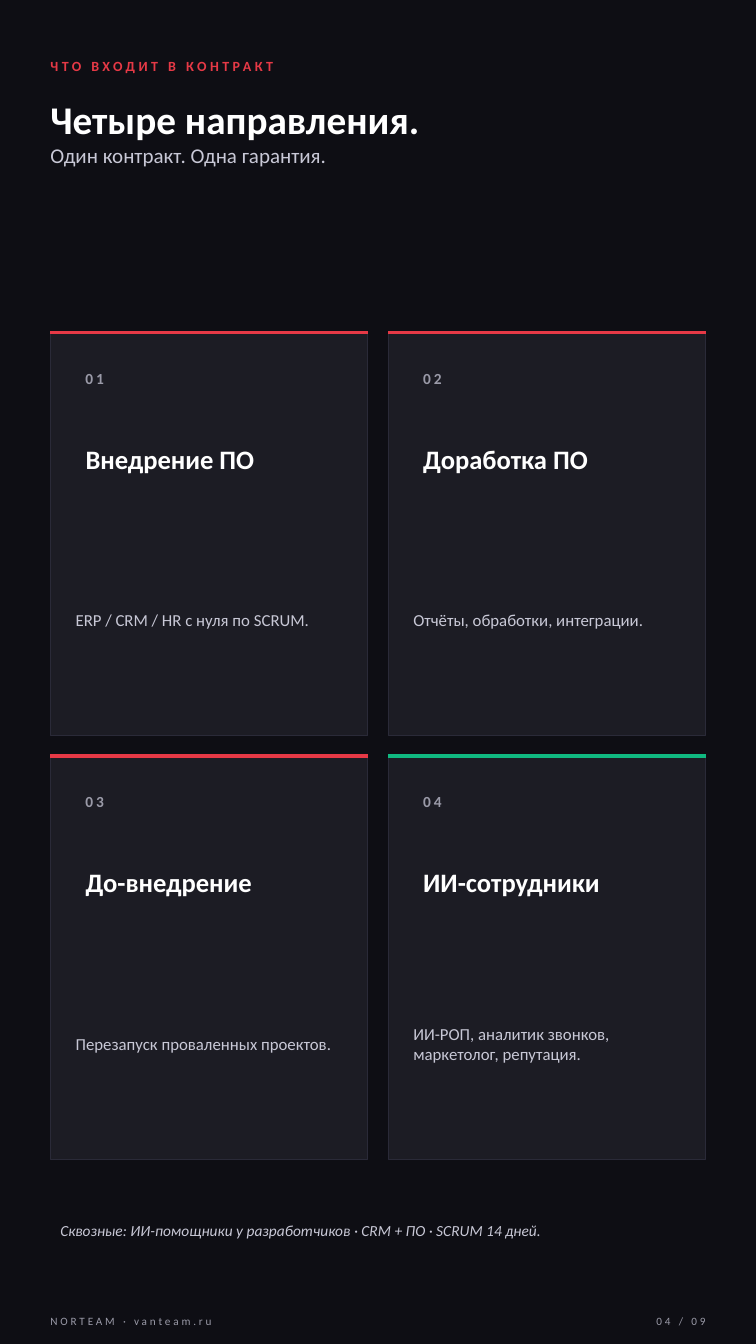
import pptx
import pptx.dml.color
import pptx.enum.shapes
import pptx.enum.text
import pptx.oxml.ns
import pptx.util

PX = 9144
FONT = "Calibri"
BACK, PANEL, EDGE = "0E0E14", "1C1C24", "2A2A38"
RED, GREEN = "E63946", "10B981"
WHITE, SOFT, MUTED = "FFFFFF", "C8C8D6", "9A9AA8"
CARD_W, CARD_H = 315, 400
LEFT, TOP, GAP = 50, 330, 20
CARDS = [
    ("Внедрение ПО", "ERP / CRM / HR с нуля по SCRUM.", RED),
    ("Доработка ПО", "Отчёты, обработки, интеграции.", RED),
    ("До-внедрение", "Перезапуск проваленных проектов.", RED),
    ("ИИ-сотрудники", "ИИ-РОП, аналитик звонков, маркетолог, репутация.", GREEN),
]


def px(*values):
    """Turn whole px into EMU lengths."""
    return [pptx.util.Emu(v * PX) for v in values]


def rgb(value):
    """Turn a hex string into a colour."""
    return pptx.dml.color.RGBColor.from_string(value)


def style_run(r, size, color, bold=False, italic=False, spacing=0):
    """Format one run; spacing is in points."""
    r.font.name = FONT
    r.font.size = pptx.util.Pt(size)
    r.font.color.rgb = rgb(color)
    r.font.bold = bold
    r.font.italic = italic
    if spacing:
        r.font._element.set("spc", str(int(spacing * 100)))


def add_text(slide, box, text, *styles, inset=False, top=False, right=False):
    """Add a one-paragraph text box with one style for each line."""
    tf = slide.shapes.add_textbox(*px(*box)).text_frame
    tf.word_wrap = True
    anchor = pptx.enum.text.MSO_ANCHOR
    tf.vertical_anchor = anchor.TOP if top else anchor.MIDDLE
    if not inset:
        tf.margin_left = tf.margin_top = tf.margin_right = tf.margin_bottom = 0
    p = tf.paragraphs[0]
    p.text = text
    if right:
        p.alignment = pptx.enum.text.PP_ALIGN.RIGHT
    for r, style in zip(p.runs, styles):
        style_run(r, **style)
    return p


def add_panel(slide, x, y, accent):
    """Add a card background with an accent line along its top."""
    sp = slide.shapes.add_shape(
        pptx.enum.shapes.MSO_SHAPE.RECTANGLE, *px(x, y, CARD_W, CARD_H))
    sp.shadow.inherit = False
    sp.fill.solid()
    sp.fill.fore_color.rgb = rgb(PANEL)
    sp.line.color.rgb = rgb(EDGE)
    sp.line.width = pptx.util.Pt(0.75)
    line = slide.shapes.add_connector(
        pptx.enum.shapes.MSO_CONNECTOR.STRAIGHT, *px(x, y, x + CARD_W, y))
    line.line.color.rgb = rgb(accent)
    line.line.width = pptx.util.Pt(2.5)
    effects = pptx.oxml.parse_xml(
        f'<a:effectLst {pptx.oxml.ns.nsdecls("a")}/>')
    line._element.spPr.append(effects)


def add_card(slide, index, title, detail, accent):
    """Add a numbered card at its place in the two-column grid."""
    row, col = divmod(index, 2)
    x, y = LEFT + col * (CARD_W + GAP), TOP + row * (CARD_H + GAP)
    add_panel(slide, x, y, accent)
    add_text(slide, (x + 25, y + 30, 150, 30), f"{index + 1:02}",
             dict(size=11, color=MUTED, bold=True, spacing=2), inset=True)
    add_text(slide, (x + 25, y + 70, 265, 110), title,
             dict(size=19, color=WHITE, bold=True), inset=True)
    add_text(slide, (x + 25, y + 190, 265, 190), detail,
             dict(size=12, color=SOFT))


def add_header(slide):
    """Add the eyebrow, the title and the subtitle."""
    add_text(slide, (LEFT, 50, 630, 30), "ЧТО ВХОДИТ В КОНТРАКТ",
             dict(size=10, color=RED, bold=True, spacing=2.5))
    p = add_text(slide, (LEFT, 95, 650, 160),
                 "Четыре направления.\vОдин контракт. Одна гарантия.",
                 dict(size=28, color=WHITE, bold=True),
                 dict(size=15, color=SOFT), top=True)
    p.space_after = pptx.util.Pt(4)


def add_footer(slide):
    """Add the closing note, the sender and the page number."""
    add_text(slide, (LEFT, 1200, 650, 40),
             "Сквозные: ИИ-помощники у разработчиков · CRM + ПО · SCRUM 14 дней.",
             dict(size=11, color=SOFT, italic=True), inset=True)
    small = dict(size=8, color=MUTED, spacing=2)
    add_text(slide, (LEFT, 1298, 450, 25), "NORTEAM · vanteam.ru", small)
    add_text(slide, (590, 1298, 110, 25), "04 / 09", small, right=True)


def main():
    """Build the slide and save it."""
    prs = pptx.Presentation()
    prs.slide_width, prs.slide_height = px(750, 1333)
    slide = prs.slides.add_slide(prs.slide_layouts[6])
    slide.background.fill.solid()
    slide.background.fill.fore_color.rgb = rgb(BACK)
    add_header(slide)
    for index, card in enumerate(CARDS):
        add_card(slide, index, *card)
    add_footer(slide)
    prs.save("out.pptx")


if __name__ == "__main__":
    main()
